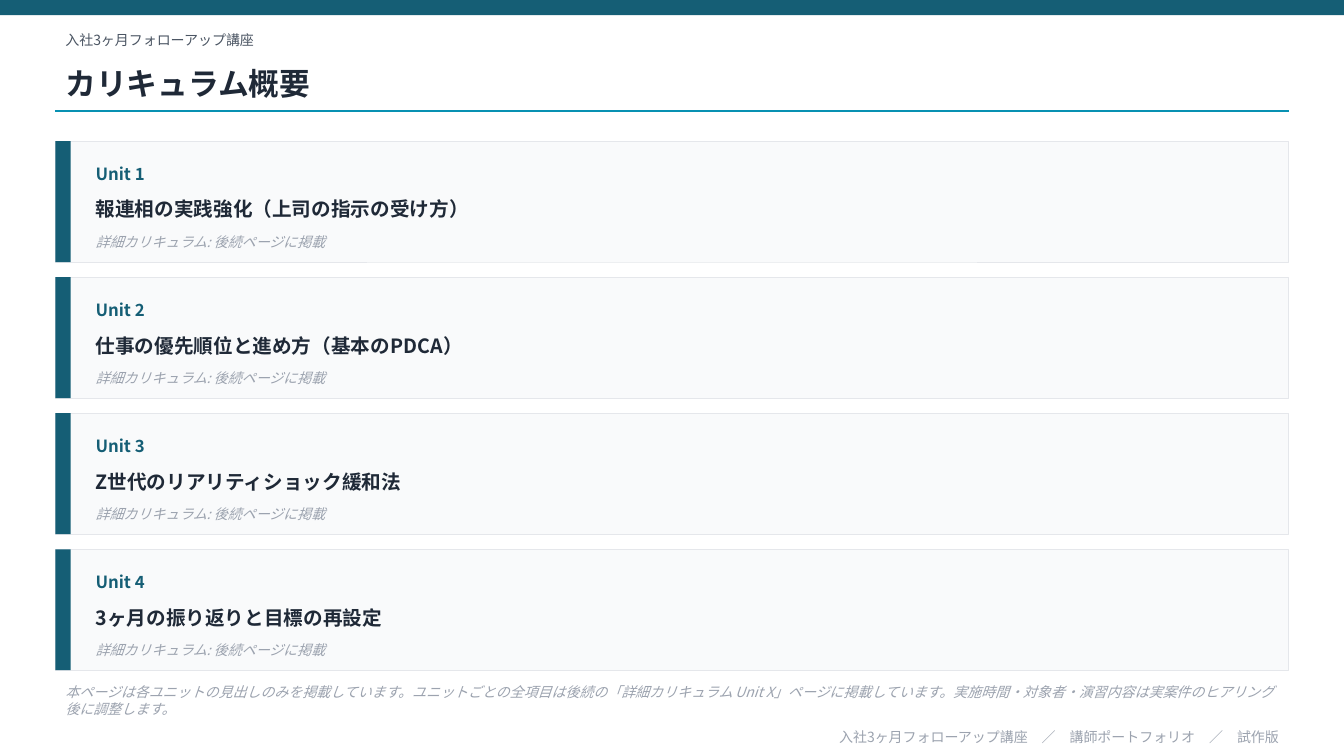
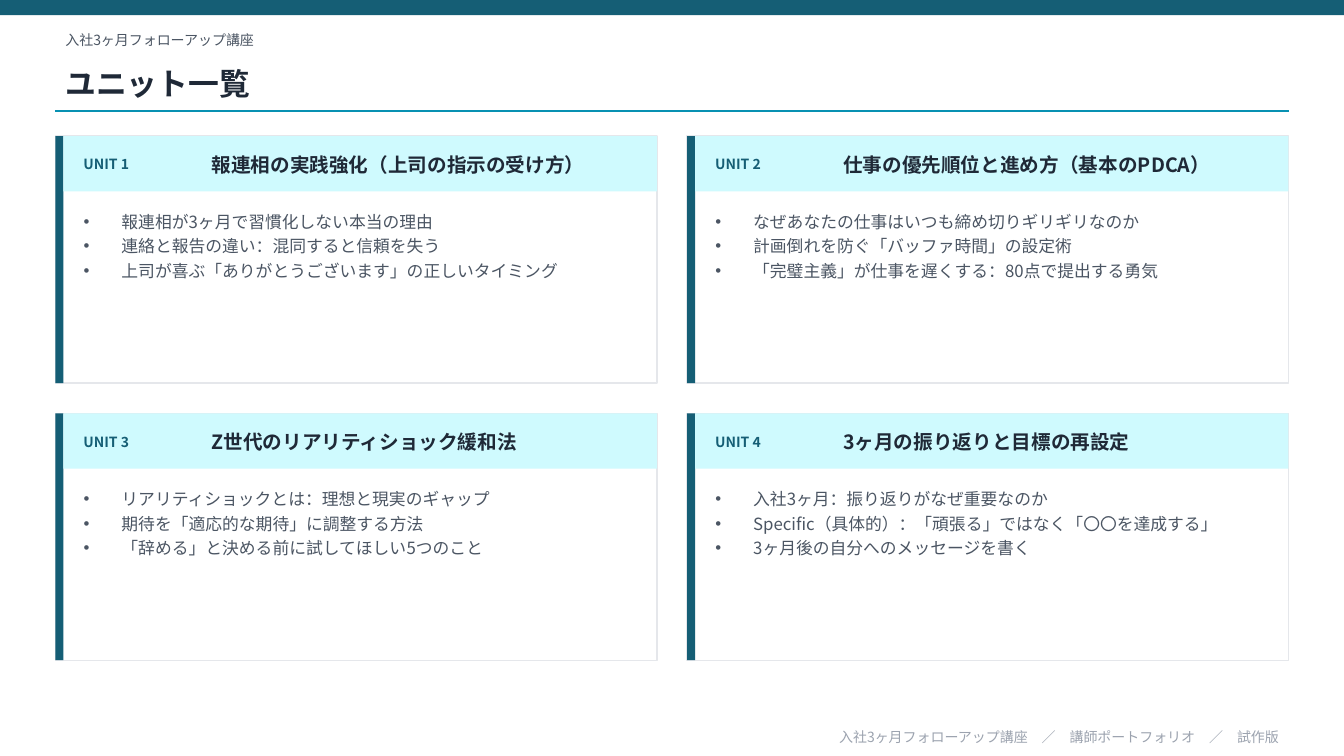
from dataclasses import dataclass

from lxml.etree import SubElement
from pptx import Presentation
from pptx.dml.color import RGBColor
from pptx.enum.shapes import MSO_CONNECTOR as Connector, MSO_SHAPE as Preset
from pptx.enum.text import MSO_ANCHOR as Anchor, MSO_AUTO_SIZE as AutoSize, PP_ALIGN as Align
from pptx.oxml.ns import qn
from pptx.util import Pt


@dataclass(frozen=True)
class Theme:
    font: str = "Noto Sans CJK JP"
    dark: str = "155E75"
    rule: str = "0891B2"
    tint: str = "CFFAFE"
    ink: str = "1F2937"
    body: str = "4B5563"
    muted: str = "9CA3AF"
    border: str = "E5E7EB"
    panel: str = "F9FAFB"
    white: str = "FFFFFF"
    title_size: int = 22
    heading_size: int = 14
    text_size: int = 12
    small_size: int = 10


theme = Theme()
STYLES = {
    "course": {"size": theme.small_size, "color": theme.body},
    "title": {"size": theme.title_size, "color": theme.ink, "bold": True},
    "heading": {"size": theme.heading_size, "color": theme.ink, "bold": True},
    "unit": {"size": theme.text_size, "color": theme.dark, "bold": True},
    "tag": {"size": theme.small_size, "color": theme.dark, "bold": True},
    "list": {"size": theme.text_size, "color": theme.body},
    "note": {"size": theme.small_size, "color": theme.muted, "italic": True},
    "footer": {"size": theme.small_size, "color": theme.muted},
}

COURSE = "入社3ヶ月フォローアップ講座"
FOOTER = f"{COURSE}　／　講師ポートフォリオ　／　試作版"
DETAIL = "詳細カリキュラム: 後続ページに掲載"
NOTE = (
    "本ページは各ユニットの見出しのみを掲載しています。"
    "ユニットごとの全項目は後続の「詳細カリキュラム Unit X」ページに掲載しています。"
    "実施時間・対象者・演習内容は実案件のヒアリング後に調整します。"
)
UNITS = [
    ("報連相の実践強化（上司の指示の受け方）", [
        "報連相が3ヶ月で習慣化しない本当の理由",
        "連絡と報告の違い：混同すると信頼を失う",
        "上司が喜ぶ「ありがとうございます」の正しいタイミング",
    ]),
    ("仕事の優先順位と進め方（基本のPDCA）", [
        "なぜあなたの仕事はいつも締め切りギリギリなのか",
        "計画倒れを防ぐ「バッファ時間」の設定術",
        "「完璧主義」が仕事を遅くする：80点で提出する勇気",
    ]),
    ("Z世代のリアリティショック緩和法", [
        "リアリティショックとは：理想と現実のギャップ",
        "期待を「適応的な期待」に調整する方法",
        "「辞める」と決める前に試してほしい5つのこと",
    ]),
    ("3ヶ月の振り返りと目標の再設定", [
        "入社3ヶ月：振り返りがなぜ重要なのか",
        "Specific（具体的）：「頑張る」ではなく「〇〇を達成する」",
        "3ヶ月後の自分へのメッセージを書く",
    ]),
]

SLIDE_WIDTH, SLIDE_HEIGHT = 960, 540
MARGIN = 39.6
CONTENT_WIDTH = SLIDE_WIDTH - 2 * MARGIN


def add_block(slide, bounds, fill, border=None, border_width=1):
    block = slide.shapes.add_shape(Preset.RECTANGLE, *map(Pt, bounds))
    block.shadow.inherit = False
    block.fill.solid()
    block.fill.fore_color.rgb = RGBColor.from_string(fill)
    if border:
        block.line.color.rgb = RGBColor.from_string(border)
        block.line.width = Pt(border_width)
    else:
        block.line.fill.background()


def write(slide, bounds, lines, style, placeholder=None, align=Align.LEFT):
    """Set the lines in a placeholder, or in a new text box; lists get bullets."""
    box = placeholder or slide.shapes.add_textbox(0, 0, 0, 0)
    for name, value in zip(("left", "top", "width", "height"), bounds):
        setattr(box, name, Pt(value))
    bulleted = style == "list"
    frame = box.text_frame
    frame.text = "\n".join(lines)
    frame_format = {
        "word_wrap": True,
        "auto_size": AutoSize.NONE,
        "vertical_anchor": Anchor.TOP if bulleted else Anchor.MIDDLE,
    }
    for name, value in frame_format.items():
        setattr(frame, name, value)

    font_format = {"name": theme.font, "bold": False, "italic": False, **STYLES[style]}
    color = RGBColor.from_string(font_format.pop("color"))
    font_format["size"] = Pt(font_format["size"])
    for paragraph in frame.paragraphs:
        paragraph.alignment = align
        paragraph.space_before = Pt(0)
        paragraph.space_after = Pt(3 if bulleted else 0)
        if bulleted:
            properties = paragraph._p.get_or_add_pPr()
            properties.set("marL", str(Pt(27)))
            properties.set("indent", str(-Pt(27)))
            SubElement(properties, qn("a:buChar")).set("char", "•")
        for run in paragraph.runs:
            for name, value in font_format.items():
                setattr(run.font, name, value)
            run.font.color.rgb = color
            east_asian = SubElement(run._r.get_or_add_rPr(), qn("a:ea"))
            east_asian.set("typeface", theme.font)


presentation = Presentation()
presentation.slide_width = Pt(SLIDE_WIDTH)
presentation.slide_height = Pt(SLIDE_HEIGHT)
title_only, comparison = presentation.slide_layouts[5], presentation.slide_layouts[4]
overview = presentation.slides.add_slide(title_only)
unit_grid = presentation.slides.add_slide(comparison)

# Shared header and footer
for slide, title in ((overview, "カリキュラム概要"), (unit_grid, "ユニット一覧")):
    add_block(slide, (0, 0, SLIDE_WIDTH, 10.8), theme.dark)
    write(slide, (MARGIN, 18, CONTENT_WIDTH, 21.6), [COURSE], "course")
    write(slide, (MARGIN, 39.6, CONTENT_WIDTH, 39.6), [title], "title", slide.shapes.title)
    rule = slide.shapes.add_connector(
        Connector.STRAIGHT, *map(Pt, (MARGIN, 79.2, SLIDE_WIDTH - MARGIN, 79.2))
    )
    rule.line.color.rgb = RGBColor.from_string(theme.rule)
    rule.line.width = Pt(1)
    SubElement(rule._element.spPr, qn("a:effectLst"))
    write(slide, (MARGIN, 518.4, CONTENT_WIDTH, 15.84), [FOOTER], "footer", align=Align.RIGHT)

# Curriculum overview: one full-width row per unit
ROW_TOP, ROW_HEIGHT, ROW_GAP = 100.8, 86.4, 10.8
row_text_left = MARGIN + 21.6
row_text_width = CONTENT_WIDTH - 36
for index, (heading, _) in enumerate(UNITS):
    top = ROW_TOP + index * (ROW_HEIGHT + ROW_GAP)
    add_block(overview, (MARGIN, top, CONTENT_WIDTH, ROW_HEIGHT), theme.panel, theme.border, 0.5)
    add_block(overview, (MARGIN, top, 10.8, ROW_HEIGHT), theme.dark)
    write(overview, (row_text_left, top + 8.64, 108, 28.8), [f"Unit {index + 1}"], "unit")
    write(overview, (row_text_left, top + 32.4, row_text_width, 32.4), [heading], "heading")
    write(overview, (row_text_left, top + 61.2, row_text_width, 21.6), [DETAIL], "note")
write(overview, (MARGIN, 486, CONTENT_WIDTH, 28.8), [NOTE], "note")

# Unit list: two by two cards
CARD_TOP, CARD_HEIGHT, CARD_GAP, ACCENT_WIDTH = 97.2, 176.4, 21.6, 5.76
card_width = (CONTENT_WIDTH - CARD_GAP) / 2
bodies = [shape for shape in unit_grid.placeholders if shape.placeholder_format.idx > 0]
for index, ((heading, topics), body) in enumerate(zip(UNITS, bodies)):
    row, column = divmod(index, 2)
    left = MARGIN + column * (card_width + CARD_GAP)
    top = CARD_TOP + row * (CARD_HEIGHT + CARD_GAP)
    text_left = left + 12.96
    add_block(unit_grid, (left, top, card_width, CARD_HEIGHT), theme.white, theme.border)
    add_block(unit_grid, (left, top, ACCENT_WIDTH, CARD_HEIGHT), theme.dark)
    add_block(unit_grid, (left + ACCENT_WIDTH, top, card_width - ACCENT_WIDTH, 39.6), theme.tint)
    write(unit_grid, (text_left, top + 5.76, 86.4, 28.8), [f"UNIT {index + 1}"], "tag")
    write(unit_grid, (left + 104.4, top + 5.76, 314.64, 28.8), [heading], "heading")
    write(unit_grid, (text_left, top + 50.4, 403.68, 115.2), topics, "list", body)
    # Placeholders start at the back; lift the list above its card
    body.element.getparent().append(body.element)

presentation.save("out.pptx")
